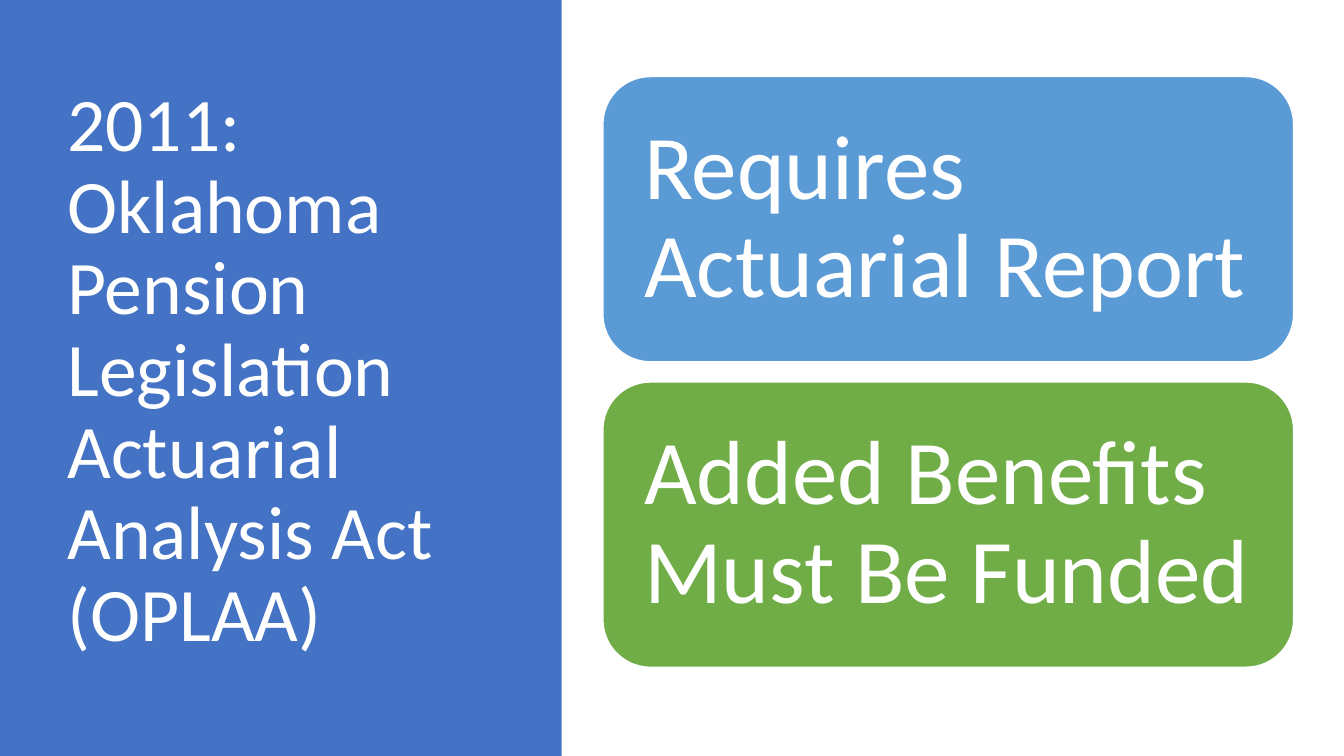
from dataclasses import dataclass

import pptx
import pptx.dml.color
import pptx.enum.shapes
import pptx.enum.text
import pptx.shapes.autoshape
import pptx.slide
import pptx.text.text
import pptx.util

Inches = pptx.util.Inches
Shape = pptx.enum.shapes.MSO_SHAPE


@dataclass(frozen=True)
class Theme:
    font: str = "Calibri"
    white: str = "FFFFFF"
    panel: str = "4472C4"
    report: str = "5B9BD5"
    funding: str = "70AD47"
    title_size: int = 54
    card_size: int = 65


@dataclass(frozen=True)
class Card:
    text: str
    color: str


THEME = Theme()
CARDS = [
    Card("Requires Actuarial Report", THEME.report),
    Card("Added Benefits Must Be Funded", THEME.funding),
]
CARD_LEFT, CARD_TOP, CARD_WIDTH, CARD_HEIGHT = 5.98, 0.76, 6.85, 2.83
CARD_GAP = 0.2


def rgb(color: str) -> pptx.dml.color.RGBColor:
    return pptx.dml.color.RGBColor.from_string(color)


def write_text(frame: pptx.text.text.TextFrame, text: str, size: int, inset: dict[str, float]) -> None:
    frame.word_wrap = True
    frame.vertical_anchor = pptx.enum.text.MSO_ANCHOR.MIDDLE
    for side, length in inset.items():
        setattr(frame, f"margin_{side}", Inches(length))
    para = frame.paragraphs[0]
    para.alignment = pptx.enum.text.PP_ALIGN.LEFT
    para.line_spacing = 0.9
    span = para.add_run()
    span.text = text
    font_format = {"name": THEME.font, "size": pptx.util.Pt(size)}
    for name, value in font_format.items():
        setattr(span.font, name, value)
    span.font.color.rgb = rgb(THEME.white)


def add_block(
    page: pptx.slide.Slide, kind: Shape, left: float, top: float, width: float, height: float, color: str
) -> pptx.shapes.autoshape.Shape:
    block = page.shapes.add_shape(kind, Inches(left), Inches(top), Inches(width), Inches(height))
    block.shadow.inherit = False
    block.fill.solid()
    block.fill.fore_color.rgb = rgb(color)
    block.line.fill.background()
    return block


def add_title_panel(page: pptx.slide.Slide) -> None:
    add_block(page, Shape.RECTANGLE, 0, 0, 5.57, 7.5, THEME.panel)
    box = page.shapes.add_textbox(Inches(0.57), Inches(0.68), Inches(4.16), Inches(6.02))
    write_text(
        box.text_frame,
        "2011: Oklahoma Pension Legislation Actuarial Analysis Act (OPLAA)",
        THEME.title_size,
        {"left": 0.1, "right": 0.1, "top": 0.05, "bottom": 0.05},
    )


def add_card(page: pptx.slide.Slide, card: Card, top: float) -> None:
    block = add_block(page, Shape.ROUNDED_RECTANGLE, CARD_LEFT, top, CARD_WIDTH, CARD_HEIGHT, card.color)
    block.line.color.rgb = rgb(THEME.white)
    block.line.width = pptx.util.Pt(1)
    inset = dict.fromkeys(("left", "right", "top", "bottom"), 0.27)
    write_text(block.text_frame, card.text, THEME.card_size, inset)


def main() -> None:
    deck = pptx.Presentation()
    deck.slide_width, deck.slide_height = Inches(13.33), Inches(7.5)
    page = deck.slides.add_slide(deck.slide_layouts[6])

    # Left panel with the name of the act
    add_title_panel(page)

    # Stacked requirement cards
    for row, card in enumerate(CARDS):
        add_card(page, card, CARD_TOP + row * (CARD_HEIGHT + CARD_GAP))

    deck.save("out.pptx")


if __name__ == "__main__":
    main()
